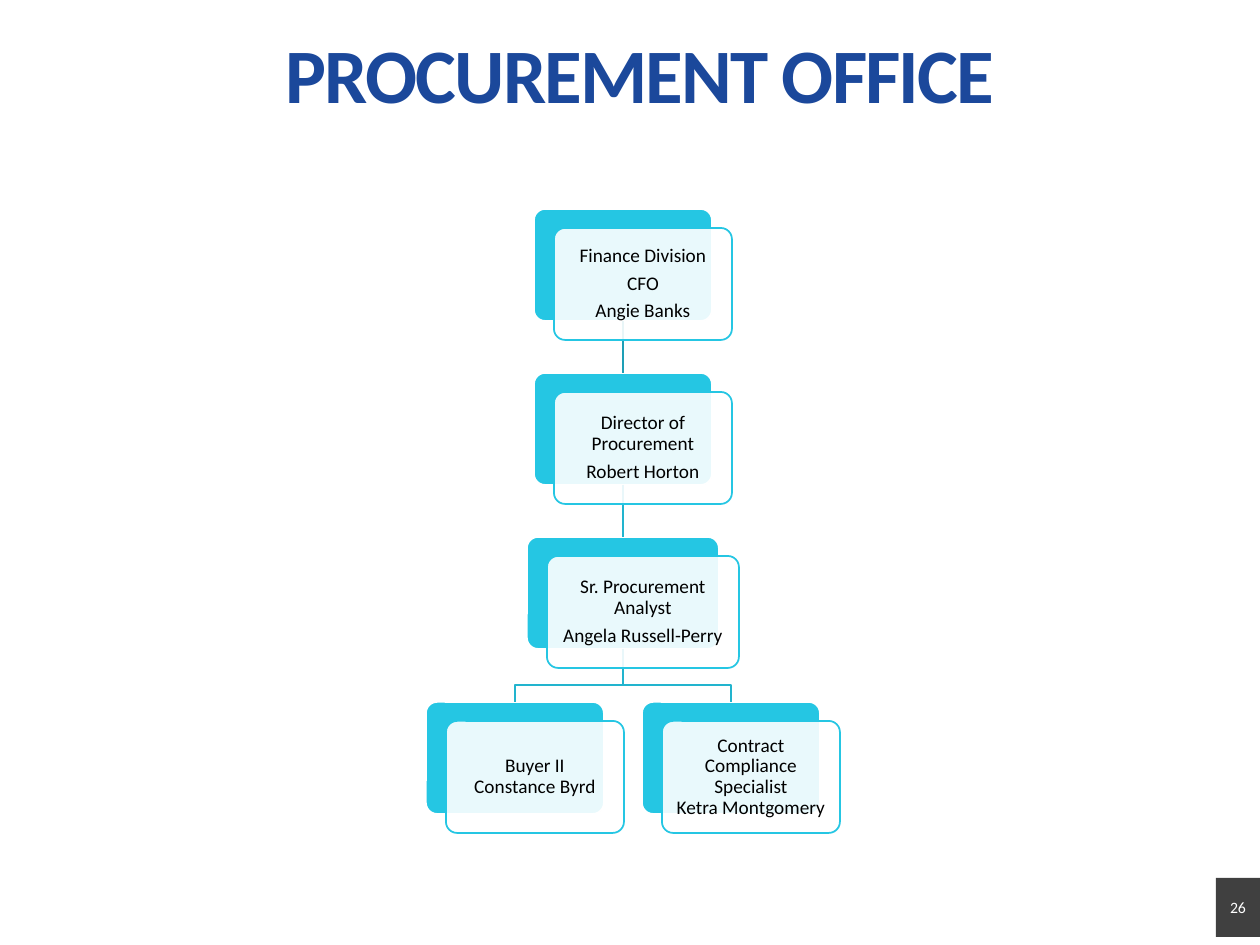
"""Build the procurement office organisation chart slide."""
import pptx
import pptx.dml.color
import pptx.enum.shapes
import pptx.enum.text
import pptx.oxml
import pptx.oxml.ns
import pptx.util

PX = pptx.util.Inches(1) // 126
BLUE = pptx.dml.color.RGBColor(0x1B, 0x48, 0x9B)
CYAN = pptx.dml.color.RGBColor(0x25, 0xC6, 0xE3)
TEAL = pptx.dml.color.RGBColor(0x22, 0xB4, 0xCE)
DARK_TEAL = pptx.dml.color.RGBColor(0x1E, 0x9F, 0xB6)
GRAY = pptx.dml.color.RGBColor(0x40, 0x40, 0x40)
WHITE = pptx.dml.color.RGBColor(0xFF, 0xFF, 0xFF)
BLACK = pptx.dml.color.RGBColor(0x00, 0x00, 0x00)

CENTER_X = 623
BRANCH = 108
CARD_HEIGHT = 112
OFFSET_X, OFFSET_Y = 20, 19
CARDS = [
    (CENTER_X, 0, 178, [["Finance Division"], ["CFO"], ["Angie Banks"]]),
    (CENTER_X, 1, 178, [["Director of Procurement"], ["Robert Horton"]]),
    (CENTER_X, 2, 192, [["Sr. Procurement Analyst"], ["Angela Russell-Perry"]]),
    (CENTER_X - BRANCH, 3, 178, [["Buyer II", "Constance Byrd"]]),
    (CENTER_X + BRANCH, 3, 178,
     [["Contract Compliance Specialist", "Ketra Montgomery"]]),
]


def add_box(kind, left, top, width, height, fill, line=None):
    shape = slide.shapes.add_shape(kind, left * PX, top * PX, width * PX, height * PX)
    shape.shadow.inherit = False
    shape.fill.solid()
    shape.fill.fore_color.rgb = fill
    if line is None:
        shape.line.fill.background()
    else:
        shape.adjustments[0] = 0.1
        shape.line.color.rgb = line
        shape.line.width = pptx.util.Pt(1)
    return shape


def write_text(shape, paragraphs, size, color, inset, anchor, spacing=1.0, after=0):
    frame = shape.text_frame
    frame.word_wrap = True
    frame.vertical_anchor = anchor
    frame.margin_left = frame.margin_right = inset * PX
    frame.margin_top = frame.margin_bottom = inset * PX
    for index, lines in enumerate(paragraphs):
        paragraph = frame.add_paragraph() if index else frame.paragraphs[0]
        paragraph.alignment = pptx.enum.text.PP_ALIGN.CENTER
        paragraph.line_spacing = spacing
        paragraph.space_after = pptx.util.Pt(after)
        for number, line in enumerate(lines):
            if number:
                paragraph.add_line_break()
            run = paragraph.add_run()
            run.text = line
            run.font.name = "Calibri"
            run.font.size = pptx.util.Pt(size)
            run.font.color.rgb = color


presentation = pptx.Presentation()
presentation.slide_width = 1260 * PX
presentation.slide_height = 945 * PX
slide = presentation.slides.add_slide(presentation.slide_layouts[6])
rounded = pptx.enum.shapes.MSO_SHAPE.ROUNDED_RECTANGLE
middle = pptx.enum.text.MSO_ANCHOR.MIDDLE

title = slide.shapes.add_textbox(10 * PX, 32 * PX, 1260 * PX, 66 * PX)
write_text(title, [["PROCUREMENT OFFICE"]], 44, BLUE, 5,
           pptx.enum.text.MSO_ANCHOR.TOP, 0.9)
title_run = title.text_frame.paragraphs[0].runs[0]
title_run.font.bold = True
title_run.font._element.set("spc", "-110")

tops = [209 + row * 493 // 3 for row in range(4)]
back_cards = [
    add_box(rounded, center - width // 2, tops[row], width, CARD_HEIGHT, CYAN, WHITE)
    for center, row, width, paragraphs in CARDS
]

for upper, lower, color in zip(back_cards, back_cards[1:3], (DARK_TEAL, TEAL)):
    connector = slide.shapes.add_connector(
        pptx.enum.shapes.MSO_CONNECTOR.STRAIGHT, 0, 0, 0, 0)
    connector.begin_connect(upper, 2)
    connector.end_connect(lower, 0)
    connector.line.color.rgb = color
    connector.line.width = pptx.util.Pt(1)
    connector._element.spPr.append(pptx.oxml.parse_xml(
        f'<a:effectLst {pptx.oxml.ns.nsdecls("a")}/>'))

for child_x in (CENTER_X + BRANCH, CENTER_X - BRANCH):
    builder = slide.shapes.build_freeform(CENTER_X, tops[2] + CARD_HEIGHT, scale=PX)
    builder.add_line_segments(
        [(CENTER_X, 685), (child_x, 685), (child_x, tops[3])], close=False)
    branch = builder.convert_to_shape()
    branch.shadow.inherit = False
    branch.fill.background()
    branch.line.color.rgb = TEAL
    branch.line.width = pptx.util.Pt(1)

for center, row, width, paragraphs in CARDS:
    card = add_box(rounded, center - width // 2 + OFFSET_X, tops[row] + OFFSET_Y,
                   width, CARD_HEIGHT, WHITE, CYAN)
    fill_color = card._element.spPr.find(
        f'{pptx.oxml.ns.qn("a:solidFill")}/{pptx.oxml.ns.qn("a:srgbClr")}')
    fill_color.append(pptx.oxml.parse_xml(
        f'<a:alpha {pptx.oxml.ns.nsdecls("a")} val="90000"/>'))
    write_text(card, paragraphs, 11, BLACK, 6, middle, 0.9, 4)

page_number = add_box(pptx.enum.shapes.MSO_SHAPE.RECTANGLE, 1216, 878, 44, 59, GRAY)
write_text(page_number, [["26"]], 9, WHITE, 0, middle)

presentation.save("out.pptx")
